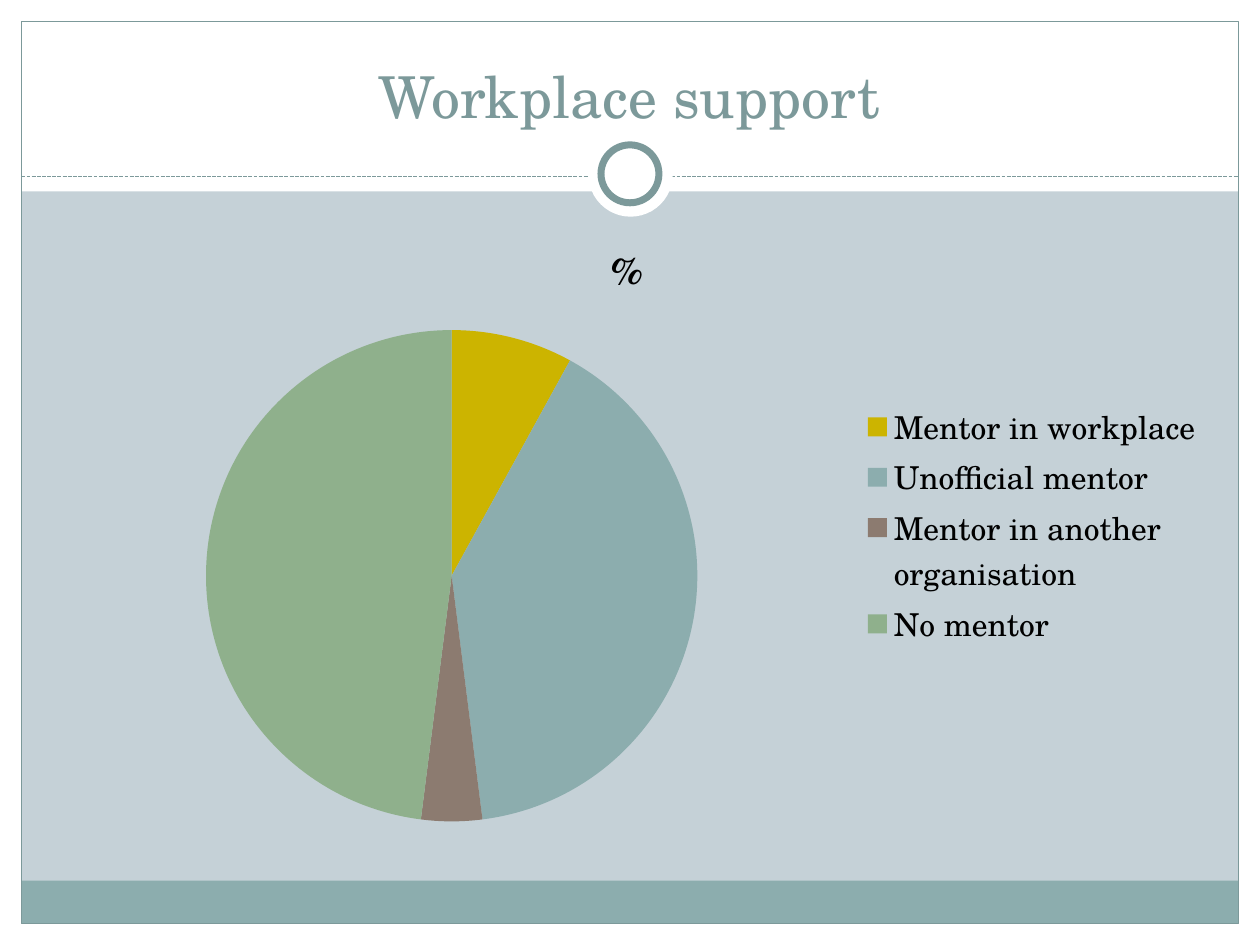
from dataclasses import dataclass
from typing import Optional

from lxml import etree
from pptx import Presentation
from pptx.chart.data import CategoryChartData
from pptx.dml.color import RGBColor
from pptx.enum import chart as kinds, dml, shapes, text
from pptx.oxml import parse_xml
from pptx.oxml.ns import nsdecls, qn
from pptx.util import Inches, Pt


@dataclass(frozen=True)
class Theme:
    font: str = "TeX Gyre Schola"
    back: str = "C5D1D7"
    white: str = "FFFFFF"
    black: str = "000000"
    line: str = "7C999A"
    teal: str = "8CADAE"
    slices: tuple = ("D16349", "CCB400", "8CADAE", "8C7B70", "8FB08C")
    title: float = 33
    head: float = 21.6
    body: float = 18
    thin: float = 0.75
    ring: float = 4


@dataclass(frozen=True)
class Panel:
    left: float
    top: float
    width: float
    height: float
    fill: Optional[str] = None
    line: Optional[str] = None
    weight: float = 0
    form: int = shapes.MSO_SHAPE.RECTANGLE


THEME = Theme()
OVAL = shapes.MSO_SHAPE.OVAL
WIDE, HIGH, EDGE = 10, 7.5, 0.17
INNER = WIDE - 2 * EDGE
RULE = 1.4

FRAME = (
    Panel(0, HIGH - EDGE, WIDE, EDGE, THEME.white),
    Panel(0, 0, WIDE, 1.52, THEME.white),
    Panel(0, 0, EDGE, HIGH, THEME.white),
    Panel(WIDE - EDGE, 0, EDGE, HIGH, THEME.white),
    Panel(EDGE, 6.99, INNER, 0.34, THEME.teal),
    Panel(EDGE, EDGE, INNER, HIGH - 2 * EDGE, None, THEME.line, THEME.thin),
)
BADGE = (
    Panel(4.67, 1.05, 0.67, 0.67, THEME.white, form=OVAL),
    Panel(4.77, 1.15, 0.46, 0.46, THEME.white, THEME.line, THEME.ring, OVAL),
)
SHARES = {
    "": None,
    "Mentor in workplace": 8,
    "Unofficial mentor": 40,
    "Mentor in another organisation": 4,
    "No mentor": 48,
}


def tint(code: str) -> RGBColor:
    return RGBColor.from_string(code)


def style(font, size: float, color: str) -> None:
    font.name = THEME.font
    font.size = Pt(size)
    font.color.rgb = tint(color)


def draw_panel(slide, panel: Panel) -> None:
    box = (panel.left, panel.top, panel.width, panel.height)
    shape = slide.shapes.add_shape(panel.form, *map(Inches, box))
    shape.shadow.inherit = False
    if panel.fill:
        shape.fill.solid()
        shape.fill.fore_color.rgb = tint(panel.fill)
    else:
        shape.fill.background()
    if panel.line:
        shape.line.color.rgb = tint(panel.line)
        shape.line.width = Pt(panel.weight)
    else:
        shape.line.fill.background()


def draw_rule(slide) -> None:
    ends = (EDGE, RULE, WIDE - EDGE, RULE)
    rule = slide.shapes.add_connector(shapes.MSO_CONNECTOR.STRAIGHT, *map(Inches, ends))
    rule.line.color.rgb = tint(THEME.line)
    rule.line.width = Pt(THEME.thin)
    rule.line.dash_style = dml.MSO_LINE.SQUARE_DOT
    etree.SubElement(rule.element.spPr, qn("a:effectLst"))


def draw_title(slide) -> None:
    title = slide.shapes.title
    title.left, title.top, title.width, title.height = map(Inches, (0.33, 0.25, 9.33, 0.83))
    frame = title.text_frame
    frame.vertical_anchor = text.MSO_ANCHOR.BOTTOM
    para = frame.paragraphs[0]
    para.alignment = text.PP_ALIGN.CENTER
    run = para.add_run()
    run.text = "Workplace support"
    style(run.font, THEME.title, THEME.line)
    title.element.getparent().append(title.element)


def place(parent, index: int, box: tuple, inner: bool = False) -> None:
    for old in parent.findall(qn("c:layout")):
        parent.remove(old)
    target = '<c:layoutTarget val="inner"/>' if inner else ""
    modes = "".join(f'<c:{axis}Mode val="edge"/>' for axis in "xy")
    sizes = "".join(f'<c:{key} val="{val}"/>' for key, val in zip("xywh", box))
    parent.insert(index, parse_xml(
        f'<c:layout {nsdecls("c")}><c:manualLayout>{target}{modes}{sizes}'
        "</c:manualLayout></c:layout>"))


def draw_chart(slide) -> None:
    data = CategoryChartData()
    data.categories = list(SHARES)
    data.add_series("%", list(SHARES.values()))
    box = map(Inches, (0.33, 1.67, 9.3, 5))
    chart = slide.shapes.add_chart(kinds.XL_CHART_TYPE.PIE, *box, data).chart
    style(chart.font, THEME.body, THEME.black)

    chart.has_title = True
    run = chart.chart_title.text_frame.paragraphs[0].add_run()
    run.text = "%"
    style(run.font, THEME.head, THEME.black)
    run.font.bold = True
    run.font.italic = True

    plot = chart.plots[0]
    plot.vary_by_categories = True
    for index, color in enumerate(THEME.slices):
        fill = plot.series[0].points[index].format.fill
        fill.solid()
        fill.fore_color.rgb = tint(color)

    chart.has_legend = True
    legend = chart.legend
    legend.position = kinds.XL_LEGEND_POSITION.RIGHT
    legend.include_in_layout = False
    style(legend.font, THEME.body, THEME.black)
    key = legend._element
    key.insert(1, parse_xml(
        f'<c:legendEntry {nsdecls("c")}><c:idx val="0"/><c:delete val="1"/></c:legendEntry>'))
    place(key, 2, (0.7, 0.3, 0.29, 0.4))
    area = chart._chartSpace.find(".//" + qn("c:plotArea"))
    place(area, 0, (0.14, 0.19, 0.42, 0.78), True)


def main() -> None:
    deck = Presentation()
    deck.slide_width, deck.slide_height = Inches(WIDE), Inches(HIGH)
    slide = deck.slides.add_slide(deck.slide_layouts[5])
    slide.background.fill.solid()
    slide.background.fill.fore_color.rgb = tint(THEME.back)
    for panel in FRAME:
        draw_panel(slide, panel)
    draw_rule(slide)
    for panel in BADGE:
        draw_panel(slide, panel)
    draw_title(slide)
    draw_chart(slide)
    deck.save("out.pptx")


if __name__ == "__main__":
    main()
